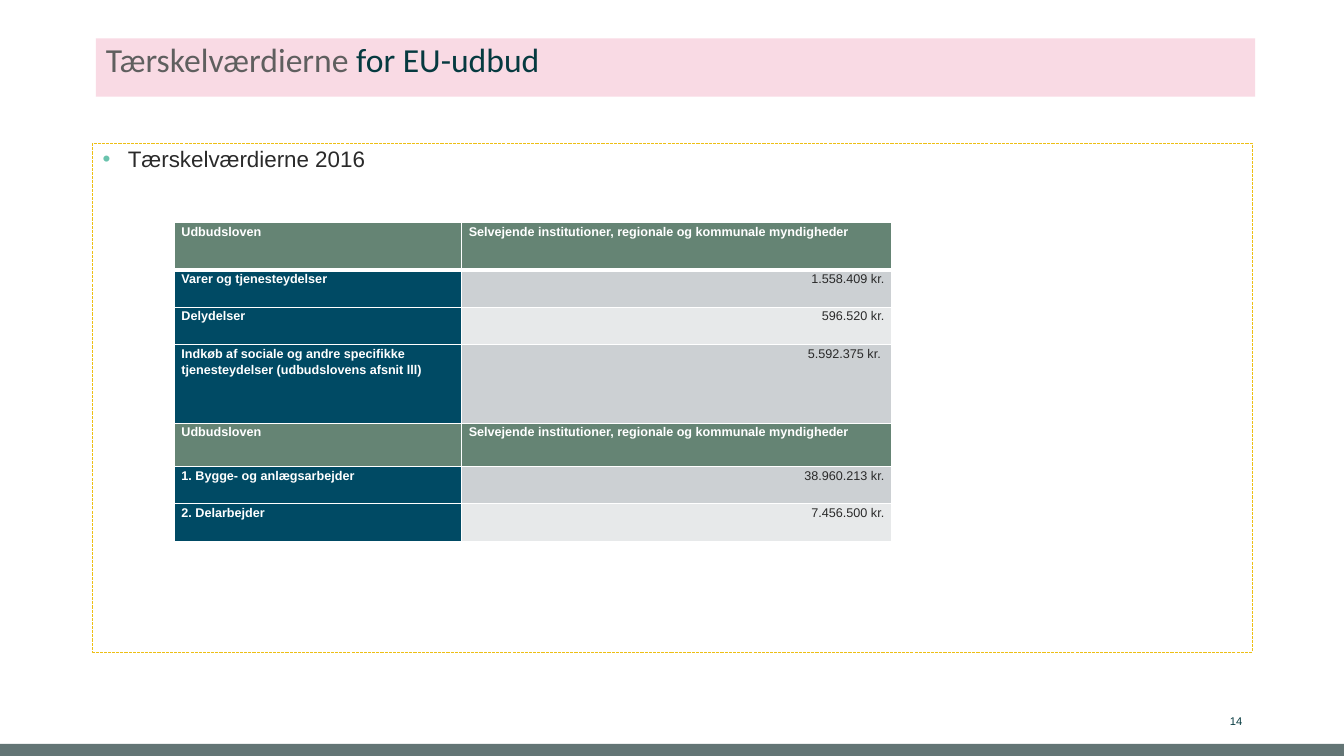
from lxml.etree import SubElement
from pptx import Presentation
from pptx.dml.color import RGBColor
from pptx.enum.dml import MSO_LINE
from pptx.enum.shapes import MSO_SHAPE
from pptx.enum.text import MSO_ANCHOR, MSO_AUTO_SIZE, PP_ALIGN
from pptx.oxml.ns import qn
from pptx.util import Inches, Pt

COLORS = {
    "bar": "637575", "title_bg": "F9DAE4", "grey": "5F5F5F", "teal": "063A40",
    "frame": "EDBF15", "bullet": "6AC3AD", "text": "2A2A2A", "white": "FFFFFF",
    "header": "658474", "label": "004A64", "dark_band": "CCD0D3", "light_band": "E7E9EA",
}
HEADER = ("Udbudsloven", "Selvejende institutioner, regionale og kommunale myndigheder")
ROWS = [
    (0.47, *HEADER, "header"),
    (0.37, "Varer og tjenesteydelser", "1.558.409 kr.", "dark_band"),
    (0.37, "Delydelser", "596.520 kr.", "light_band"),
    (0.78, "Indkøb af sociale og andre specifikke tjenesteydelser (udbudslovens afsnit lll)",
     "5.592.375 kr. ", "dark_band"),
    (0.43, *HEADER, "header"),
    (0.37, "1. Bygge- og anlægsarbejder", "38.960.213 kr.", "dark_band"),
    (0.37, "2. Delarbejder", "7.456.500 kr.", "light_band"),
]


class SlideBuilder:
    """Holds the colours, fonts and current slide."""

    def __init__(self, prs):
        """Add a title-only slide."""
        self.s = prs.slides.add_slide(prs.slide_layouts[5])

    def rgb(self, name):
        """Look up a named colour."""
        return RGBColor.from_string(COLORS[name])

    def fill(self, obj, color):
        """Fill a shape or cell with a named colour."""
        obj.fill.solid()
        obj.fill.fore_color.rgb = self.rgb(color)

    def style(self, r, size, color, font="Arial", bold=False):
        """Format a run."""
        r.font.name, r.font.size, r.font.bold = font, Pt(size), bold
        r.font.color.rgb = self.rgb(color)

    def title(self, box, parts):
        """Place the title and write its coloured parts."""
        sp = self.s.shapes.title
        sp.left, sp.top, sp.width, sp.height = map(Inches, box)
        self.fill(sp, "title_bg")
        tf = sp.text_frame
        tf.auto_size, tf.vertical_anchor = MSO_AUTO_SIZE.NONE, MSO_ANCHOR.TOP
        p = tf.paragraphs[0]
        p.alignment, p.line_spacing = PP_ALIGN.LEFT, 0.9
        for text, color in parts:
            r = p.add_run()
            r.text = text
            self.style(r, 24, color, "Calibri")

    def rect(self, box, fill=None, line=None):
        """Add a plain or dashed rectangle."""
        sp = self.s.shapes.add_shape(MSO_SHAPE.RECTANGLE, *map(Inches, box))
        sp.shadow.inherit = False
        if fill:
            self.fill(sp, fill)
        else:
            sp.fill.background()
        if line:
            sp.line.color.rgb = self.rgb(line)
            sp.line.width = Pt(0.75)
            sp.line.dash_style = MSO_LINE.SQUARE_DOT
        else:
            sp.line.fill.background()
        return sp

    def bullet_box(self, box, text):
        """Add a dashed frame with one bullet."""
        tf = self.rect(box, line="frame").text_frame
        tf.vertical_anchor = MSO_ANCHOR.TOP
        p = tf.paragraphs[0]
        p.text = text
        p.alignment, p.line_spacing = PP_ALIGN.LEFT, 0.9
        pPr = p._p.get_or_add_pPr()
        pPr.set("marL", str(Inches(0.25)))
        pPr.set("indent", str(-Inches(0.25)))
        buClr = SubElement(pPr, qn("a:buClr"))
        SubElement(buClr, qn("a:srgbClr"), val=COLORS["bullet"])
        SubElement(pPr, qn("a:buFont"), typeface="Arial")
        SubElement(pPr, qn("a:buChar"), char="•")
        self.style(p.runs[0], 16, "text")

    def number(self, box, text):
        """Add the slide number."""
        tf = self.s.shapes.add_textbox(*map(Inches, box)).text_frame
        tf.word_wrap, tf.vertical_anchor = True, MSO_ANCHOR.MIDDLE
        p = tf.paragraphs[0]
        p.text = text
        p.alignment = PP_ALIGN.RIGHT
        self.style(p.runs[0], 8, "teal")

    def borders(self, cell, top, bottom):
        """Draw white borders round a cell."""
        tcPr = cell._tc.get_or_add_tcPr()
        for side, width in (("L", 1), ("R", 1), ("T", top), ("B", bottom)):
            ln = SubElement(tcPr, qn(f"a:ln{side}"), w=str(Pt(width)))
            solid = SubElement(ln, qn("a:solidFill"))
            SubElement(solid, qn("a:srgbClr"), val=COLORS["white"])

    def cell(self, cell, text, fill, color, align, top, bottom):
        """Write and format one table cell."""
        self.borders(cell, top, bottom)
        self.fill(cell, fill)
        cell.margin_left = cell.margin_right = Inches(0.07)
        cell.margin_top = cell.margin_bottom = 0
        p = cell.text_frame.paragraphs[0]
        p.text = text
        p.alignment, p.line_spacing = align, 1.15
        self.style(p.runs[0], 9, color, bold=color == "white")

    def table(self, box, widths, rows):
        """Add the table of threshold values."""
        tbl = self.s.shapes.add_table(len(rows), len(widths), *map(Inches, box)).table
        for col, width in zip(tbl.columns, widths):
            col.width = Inches(width)
        for i, (height, label, value, band) in enumerate(rows):
            tbl.rows[i].height = Inches(height)
            header = band == "header"
            edges = (3 if i == 1 else 1, 3 if i == 0 else 1)
            self.cell(tbl.cell(i, 0), label, "header" if header else "label",
                      "white", PP_ALIGN.LEFT, *edges)
            self.cell(tbl.cell(i, 1), value, band, "white" if header else "text",
                      PP_ALIGN.LEFT if header else PP_ALIGN.RIGHT, *edges)


def main():
    """Build and save the slide."""
    prs = Presentation()
    prs.slide_width, prs.slide_height = Inches(13.33), Inches(7.5)
    b = SlideBuilder(prs)
    b.rect((0, 7.38, 13.33, 0.12), fill="bar")
    b.title((0.95, 0.38, 11.5, 0.58),
            [("Tærskelværdierne", "grey"), (" for EU-udbud", "teal")])
    b.number((11.91, 6.95, 0.51, 0.4), "14")
    b.bullet_box((0.92, 1.42, 11.5, 5.05), "Tærskelværdierne 2016")
    b.table((1.73, 2.21, 7.11, 3.16), (2.85, 4.26), ROWS)
    prs.save("out.pptx")


if __name__ == "__main__":
    main()
